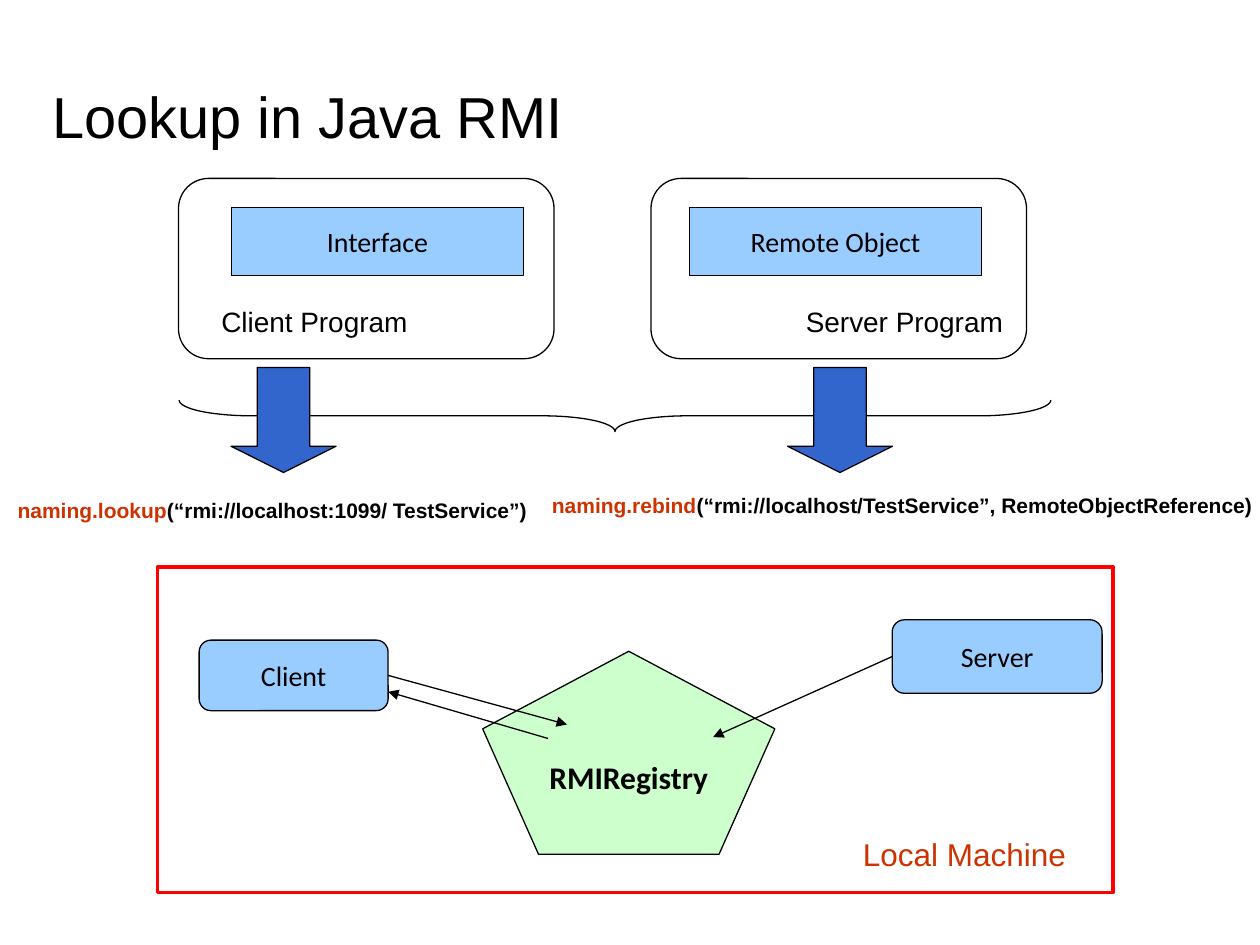
from pptx import Presentation
from pptx.dml.color import RGBColor
from pptx.enum.shapes import MSO_CONNECTOR as Line, MSO_SHAPE as Kind
from pptx.enum.text import MSO_ANCHOR as Anchor, PP_ALIGN as Align
from pptx.oxml.ns import qn
from pptx.util import Pt
from lxml.etree import SubElement

BLACK, WHITE, RED = "000000", "FFFFFF", "FF0000"
SKY, MINT, BLUE, RUST = "99CCFF", "CCFFCC", "3366CC", "CC3300"


def paint(target, color):
    """Set a font, fill or line colour from a hex string."""
    target.rgb = RGBColor.from_string(color)


def write(frame, text, size=16, font="Arial", color=BLACK, bold=False,
          align=Align.LEFT, anchor=Anchor.TOP, pad=(7.2, 3.6), wrap=True,
          lead=None, space=1.0):
    """Fill a text frame, with an optional rust-coloured lead before the text."""
    frame.word_wrap = wrap
    frame.vertical_anchor = anchor
    frame.margin_left = frame.margin_right = Pt(pad[0])
    frame.margin_top = frame.margin_bottom = Pt(pad[1])
    para = frame.paragraphs[0]
    para.alignment, para.line_spacing = align, space
    parts = [(lead, RUST)] if lead else []
    for words, hue in parts + [(text, color)]:
        run = para.add_run()
        run.text = words
        run.font.size, run.font.name, run.font.bold = Pt(size), font, bold
        paint(run.font.color, hue)


def label(slide, x, y, w, h, text, **style):
    """Add a text box."""
    box = slide.shapes.add_textbox(Pt(x), Pt(y), Pt(w), Pt(h))
    write(box.text_frame, text, **style)


def block(slide, kind, x, y, w, h, fill=None, line=BLACK, width=0.75,
          text=None, **style):
    """Add a preset shape with an optional centred caption."""
    shape = slide.shapes.add_shape(kind, Pt(x), Pt(y), Pt(w), Pt(h))
    shape.shadow.inherit = False
    if fill:
        shape.fill.solid()
        paint(shape.fill.fore_color, fill)
    else:
        shape.fill.background()
    paint(shape.line.color, line)
    shape.line.width = Pt(width)
    if text:
        write(shape.text_frame, text, font="Calibri", align=Align.CENTER,
              anchor=Anchor.MIDDLE, wrap=False, **style)
    return shape


def arrow(slide, x1, y1, x2, y2, start=None, side=0):
    """Add an arrow, joined to a side of the start shape when one is given."""
    link = slide.shapes.add_connector(Line.STRAIGHT, Pt(x1), Pt(y1), Pt(x2), Pt(y2))
    if start is not None:
        link.begin_connect(start, side)
    paint(link.line.color, BLACK)
    link.line.width = Pt(0.75)
    SubElement(link.line._get_or_add_ln(), qn("a:tailEnd"), type="triangle")
    SubElement(link._element.spPr, qn("a:effectLst"))


def program(slide, x, y, w, h, part, name, part_x, name_x, arrow_x):
    """Place one program frame, its part, its name and the arrow below it."""
    block(slide, Kind.ROUNDED_RECTANGLE, x, y, w, h, WHITE)
    block(slide, Kind.RECTANGLE, x + part_x, y + 16.6, 167, 38.7, SKY, text=part)
    label(slide, x + name_x, y + 68.6, 142, 25, name)
    block(slide, Kind.DOWN_ARROW, x + arrow_x, y + 108, 60, 60, BLUE).adjustments[1] = 0.25


def brace(slide, x, y, w, h):
    """Place a brace that opens upwards across the given box."""
    shape = block(slide, Kind.RIGHT_BRACE, x + (w - h) / 2, y + (h - w) / 2, h, w)
    shape.rotation = 90
    shape.adjustments[0] = 2.306


def machine(slide, x, y, w, h):
    """Place the local machine with its client, registry and server."""
    block(slide, Kind.RECTANGLE, x, y, w, h, line=RED, width=2)
    block(slide, Kind.REGULAR_PENTAGON, x + 185.8, y + 48.2, 167, 116, MINT,
          text="RMIRegistry", size=18, bold=True)
    client = block(slide, Kind.ROUNDED_RECTANGLE, x + 23.8, y + 41.8, 108, 40.3,
                   SKY, text="Client")
    server = block(slide, Kind.ROUNDED_RECTANGLE, x + 419.8, y + 30.2, 120, 42,
                   SKY, text="Server")
    arrow(slide, x + 131.8, y + 60, x + 234, y + 90, client, 3)
    arrow(slide, x + 223.2, y + 98, x + 131.8, y + 71.3)
    arrow(slide, x + 419.8, y + 51.2, x + 317.5, y + 97.2, server, 1)
    label(slide, x + 396, y + 149.8, 144, 29, "Local Machine", size=18, color=RUST)


def main():
    """Build and save the slide."""
    deck = Presentation()
    deck.slide_width, deck.slide_height = Pt(720), Pt(540)
    slide = deck.slides.add_slide(deck.slide_layouts[6])
    label(slide, 30, 42, 666, 52.5, "Lookup in Java RMI", size=33,
          anchor=Anchor.MIDDLE, pad=(0, 0), space=0.9)
    brace(slide, 102.3, 228.6, 498.2, 18)
    program(slide, 102, 102, 214.6, 103, "Interface", "Client Program", 30.2, 17.4, 30)
    program(slide, 372, 102, 214.6, 103, "Remote Object", "Server Program", 22, 81.4, 78)
    call = dict(size=12, bold=True, pad=(6.5, 3))
    label(slide, 3.6, 281.5, 306, 20, "(“rmi://localhost:1099/ TestService”)",
          lead="naming.lookup", **call)
    label(slide, 308.9, 278.6, 450, 20,
          "(“rmi://localhost/TestService”, RemoteObjectReference)",
          lead="naming.rebind", **call)
    machine(slide, 90, 324, 546, 186)
    deck.save("out.pptx")


if __name__ == "__main__":
    main()
